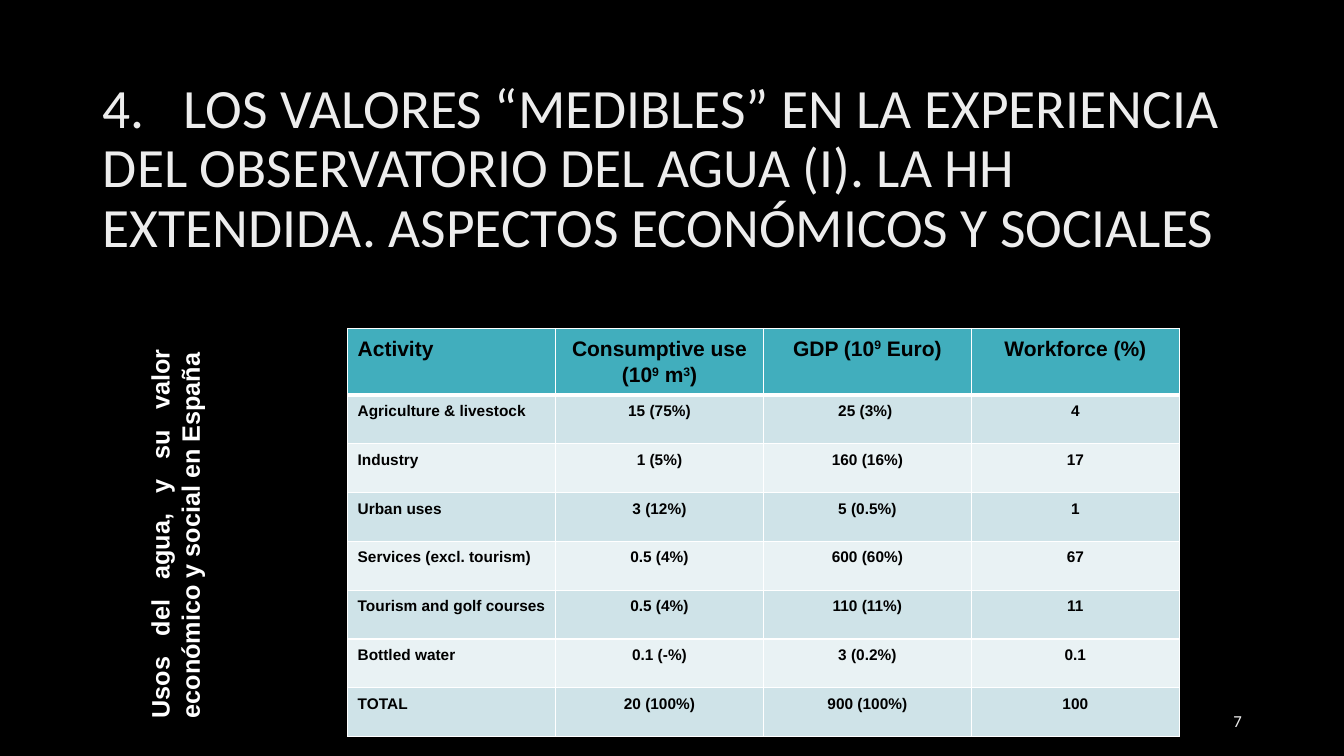
from lxml.etree import SubElement
from pptx import Presentation
from pptx.dml.color import RGBColor
from pptx.enum.text import MSO_ANCHOR as Anchor, MSO_AUTO_SIZE as AutoSize, PP_ALIGN as Align
from pptx.oxml.ns import qn
from pptx.util import Cm, Pt

BLACK = RGBColor(0x00, 0x00, 0x00)
WHITE = RGBColor(0xFF, 0xFF, 0xFF)
SILVER = RGBColor(0xED, 0xED, 0xED)
TEAL = RGBColor(0x41, 0xAE, 0xBD)
BAND_DARK = RGBColor(0xCF, 0xE3, 0xE8)
BAND_LIGHT = RGBColor(0xE9, 0xF2, 0xF4)

TITLE = ("4.\tLOS VALORES “MEDIBLES” EN LA EXPERIENCIA DEL OBSERVATORIO DEL AGUA (I). "
         "LA HH EXTENDIDA. ASPECTOS ECONÓMICOS Y SOCIALES")
WATER_USES = [
    ("Activity", "Consumptive use (10^9^ m^3^)", "GDP (10^9^ Euro)", "Workforce (%)"),
    ("Agriculture & livestock", "15 (75%)", "25 (3%) ", "4"),
    ("Industry", "1 (5%)", "160 (16%)", "17"),
    ("Urban uses", "3 (12%)", "5 (0.5%)", "1"),
    ("Services (excl. tourism)", "0.5 (4%)", "600 (60%)", "67"),
    ("Tourism and golf courses", "0.5 (4%)", "110 (11%)", "11"),
    ("Bottled water", "0.1 (-%)", "3 (0.2%)", "0.1"),
    ("TOTAL", "20 (100%)", "900 (100%)", "100"),
]


class SlideBuilder:
    heading_font = "Calibri"
    body_font = "Arial"

    def __init__(self, presentation):
        self.slide = presentation.slides.add_slide(presentation.slide_layouts[5])
        background = self.slide.background.fill
        background.solid()
        background.fore_color.rgb = BLACK

    def add_runs(self, paragraph, text, font_name, size, color, bold=False):
        for index, part in enumerate(text.split("^")):
            if not part:
                continue
            run = paragraph.add_run()
            run.text = part
            run.font.name = font_name
            run.font.size = Pt(size)
            run.font.bold = bold
            run.font.color.rgb = color
            if index % 2:
                run._r.get_or_add_rPr().set("baseline", "30000")

    def title(self, text, left, top, width, height):
        shape = self.slide.shapes.title
        shape.left, shape.top, shape.width, shape.height = left, top, width, height
        frame = shape.text_frame
        frame.word_wrap = True
        frame.auto_size = AutoSize.NONE
        frame.vertical_anchor = Anchor.MIDDLE
        frame.margin_bottom = Cm(0.64)
        paragraph = frame.paragraphs[0]
        paragraph.alignment = Align.LEFT
        paragraph.line_spacing = 0.9
        tabs = SubElement(paragraph._p.get_or_add_pPr(), qn("a:tabLst"))
        SubElement(tabs, qn("a:tab"), pos=str(Cm(2.04)), algn="l")
        self.add_runs(paragraph, text, self.heading_font, 39.6, SILVER)

    def text(self, text, left, top, width, height, font_name, size, color,
             alignment, bold=False, rotation=0):
        shape = self.slide.shapes.add_textbox(left, top, width, height)
        shape.rotation = rotation
        frame = shape.text_frame
        frame.word_wrap = True
        frame.vertical_anchor = Anchor.MIDDLE
        paragraph = frame.paragraphs[0]
        paragraph.alignment = alignment
        self.add_runs(paragraph, text, font_name, size, color, bold)

    def border(self, cell, side, points):
        line = SubElement(cell._tc.get_or_add_tcPr(), qn(f"a:{side}"), w=str(Pt(points)))
        fill = SubElement(line, qn("a:solidFill"))
        SubElement(fill, qn("a:srgbClr"), val=str(WHITE))

    def table(self, rows, left, top, column_width, header_height, row_height):
        columns = len(rows[0])
        height = header_height + row_height * (len(rows) - 1)
        table = self.slide.shapes.add_table(
            len(rows), columns, left, top, column_width * columns, height).table
        table.horz_banding = False
        for column in table.columns:
            column.width = column_width
        for row_index, values in enumerate(rows):
            header = row_index == 0
            table.rows[row_index].height = header_height if header else row_height
            band = BAND_DARK if row_index % 2 else BAND_LIGHT
            for column_index, value in enumerate(values):
                cell = table.cell(row_index, column_index)
                for side in ("lnL", "lnR", "lnT", "lnB"):
                    below_header = (header and side == "lnB") or (row_index == 1 and side == "lnT")
                    self.border(cell, side, 3 if below_header else 1)
                cell.fill.solid()
                cell.fill.fore_color.rgb = TEAL if header else band
                paragraph = cell.text_frame.paragraphs[0]
                paragraph.alignment = Align.CENTER if column_index else Align.LEFT
                paragraph.line_spacing = 1.15
                self.add_runs(paragraph, value, self.body_font, 15 if header else 11, BLACK, True)


def main():
    presentation = Presentation()
    presentation.slide_width = Cm(33.87)
    presentation.slide_height = Cm(19.05)
    builder = SlideBuilder(presentation)
    builder.title(TITLE, Cm(2.34), Cm(1.02), Cm(29.21), Cm(7.04))
    builder.table(WATER_USES, Cm(8.76), Cm(8.28), Cm(5.24), Cm(1.67), Cm(1.23))
    builder.text("Usos del agua, y su valor económico y social en España",
                 Cm(-0.5), Cm(12.55), Cm(9.8), Cm(1.8), builder.body_font, 18, WHITE,
                 Align.JUSTIFY, bold=True, rotation=270)
    builder.text("7", Cm(23.93), Cm(17.65), Cm(7.62), Cm(1.02),
                 builder.heading_font, 12, SILVER, Align.RIGHT)
    presentation.save("out.pptx")


if __name__ == "__main__":
    main()
